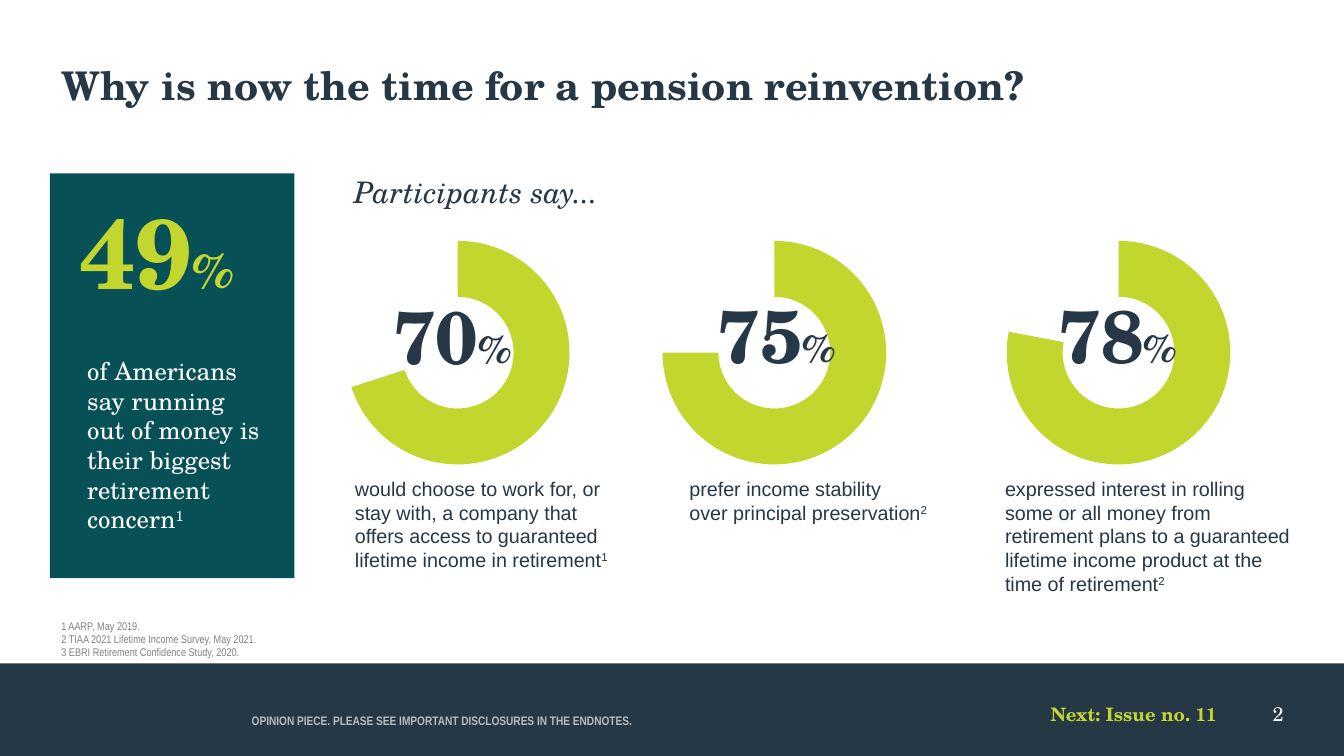
from dataclasses import dataclass
from typing import NamedTuple

from pptx import Presentation
from pptx import util as u
from pptx.chart.data import CategoryChartData
from pptx.dml.color import RGBColor
from pptx.enum import chart as charts, shapes, text

WIDTH, HEIGHT = u.Inches(15.11), u.Inches(8.5)
SERIF, SANS, NARROW = "TeX Gyre Schola", "Arial", "Arial Narrow"
NAVY, TEAL, LIME, WHITE = "263746", "075156", "C3D62E", "FFFFFF"
GREY, SILVER, BLACK = "808080", "BABCBC", "000000"
LEFT, RIGHT = text.PP_ALIGN.LEFT, text.PP_ALIGN.RIGHT
TOP, BOTTOM = text.MSO_ANCHOR.TOP, text.MSO_ANCHOR.BOTTOM


class Box(NamedTuple):
    """A frame in percent of the slide's width and height."""
    left: float
    top: float
    width: float
    height: float

    def lengths(self) -> tuple[int, ...]:
        sides = (WIDTH, HEIGHT, WIDTH, HEIGHT)
        return tuple(round(share * side / 100) for share, side in zip(self, sides))


class Style(NamedTuple):
    font: str
    size: float
    color: str
    bold: bool = False
    italic: bool = False


class Piece(NamedTuple):
    """A run of text, with its own size or raised as a note mark."""
    words: str
    size: float | None = None
    raised: bool = False


@dataclass
class Label:
    box: Box
    style: Style
    paragraphs: list[list[Piece]]
    align: text.PP_ALIGN = LEFT
    anchor: text.MSO_ANCHOR = TOP


@dataclass
class Survey:
    percent: int
    chart_left: float
    number_left: float
    number_top: float
    caption_left: float
    caption_width: float
    caption: str
    note: str


CAPTION = Style(SANS, 16, NAVY)
NUMBER = Style(SERIF, 60, NAVY, bold=True)

BANDS = [(Box(0, 87.76, 100, 12.24), NAVY), (Box(3.71, 22.94, 18.2, 53.53), TEAL)]

LABELS = [
    Label(Box(92.85, 92.82, 2.65, 3.88), Style(SERIF, 16, WHITE), [[Piece("2")]], RIGHT),
    Label(Box(18.73, 91.29, 29.78, 4.94), Style(NARROW, 10, SILVER, bold=True),
          [[Piece("OPINION PIECE. PLEASE SEE IMPORTANT DISCLOSURES IN THE ENDNOTES.")]],
          anchor=BOTTOM),
    Label(Box(49.64, 92.94, 40.9, 4.94), Style(SERIF, 15, LIME, bold=True),
          [[Piece("Next: Issue no. 11")]], RIGHT),
    Label(Box(4.57, 8.12, 90.93, 13.29), Style(SERIF, 32, NAVY, bold=True),
          [[Piece("Why is now the time for a pension reinvention?")]]),
    Label(Box(4.57, 82.35, 90.93, 4.82), Style(NARROW, 9, GREY),
          [[Piece("1 AARP, May 2019.")],
           [Piece("2 TIAA 2021 Lifetime Income Survey, May 2021.")],
           [Piece("3 EBRI Retirement Confidence Study, 2020.")]], anchor=BOTTOM),
    Label(Box(5.89, 25.18, 18.2, 23.53), Style(SERIF, 80, LIME, bold=True),
          [[Piece("49"), Piece("%", 40)]]),
    Label(Box(6.49, 47.06, 12.84, 30.71), Style(SERIF, 20, WHITE),
          [[Piece("of Americans say running out of money is their biggest retirement concern"),
            Piece("1", raised=True)]]),
    Label(Box(26.34, 22.94, 28.66, 7.88), Style(SERIF, 24, NAVY, italic=True),
          [[Piece("Participants say...")]]),
]

SURVEYS = [
    Survey(70, 20.19, 29.25, 38.35, 26.41, 20.25,
           "would choose to work for, or stay with, a company that offers access to "
           "guaranteed lifetime income in retirement", "1"),
    Survey(75, 43.75, 53.41, 38.24, 51.29, 18.6,
           "prefer income stability\nover principal preservation", "2"),
    Survey(78, 69.36, 78.76, 38.24, 74.78, 21.57,
           "expressed interest in rolling some or all money from retirement plans to a "
           "guaranteed lifetime income product at the time of retirement", "2"),
]


def rgb(color: str) -> RGBColor:
    return RGBColor.from_string(color)


def add_band(slide, box: Box, color: str) -> None:
    shape = slide.shapes.add_shape(shapes.MSO_SHAPE.RECTANGLE, *box.lengths())
    shape.shadow.inherit = False
    shape.fill.solid()
    shape.fill.fore_color.rgb = rgb(color)
    shape.line.fill.background()


def add_piece(paragraph, piece: Piece, style: Style) -> None:
    for index, line in enumerate(piece.words.split("\n")):
        if index:
            paragraph.add_line_break()
        run = paragraph.add_run()
        run.text = line
        run.font.name = style.font
        run.font.size = u.Pt(piece.size or style.size)
        run.font.bold, run.font.italic = style.bold, style.italic
        run.font.color.rgb = rgb(style.color)
        if piece.raised:
            run._r.get_or_add_rPr().set("baseline", "30000")


def add_label(slide, label: Label) -> None:
    frame = slide.shapes.add_textbox(*label.box.lengths()).text_frame
    frame.word_wrap = True
    frame.vertical_anchor = label.anchor
    frame.margin_left = frame.margin_top = frame.margin_right = frame.margin_bottom = 0
    for index, pieces in enumerate(label.paragraphs):
        paragraph = frame.add_paragraph() if index else frame.paragraphs[0]
        paragraph.alignment = label.align
        for piece in pieces:
            add_piece(paragraph, piece, label.style)


def add_ring(slide, box: Box, percent: int) -> None:
    """Add a doughnut whose remainder is left unfilled."""
    data = CategoryChartData()
    data.categories = ["1", "2"]
    data.add_series("Series 1", [percent, 100 - percent])
    chart = slide.shapes.add_chart(
        charts.XL_CHART_TYPE.DOUGHNUT, *box.lengths(), data).chart
    chart.has_legend = chart.has_title = False
    chart.font.name, chart.font.size = SERIF, u.Pt(10)
    chart.font.color.rgb = rgb(BLACK)
    plot = chart.plots[0]
    plot.vary_by_categories = True
    share, rest = (plot.series[0].points[index].format for index in range(2))
    share.fill.solid()
    share.fill.fore_color.rgb = rgb(LIME)
    rest.fill.background()
    for part in (share, rest):
        part.line.fill.background()
    for hole in chart._chartSpace.xpath(".//c:holeSize"):
        hole.set("val", "65")


def add_survey(slide, survey: Survey) -> None:
    add_ring(slide, Box(survey.chart_left, 30.24, 27.73, 32.82), survey.percent)
    add_label(slide, Label(Box(survey.number_left, survey.number_top, 10.52, 21.88),
                           NUMBER, [[Piece(str(survey.percent)), Piece("%", 32)]]))
    add_label(slide, Label(Box(survey.caption_left, 63.06, survey.caption_width, 21.88),
                           CAPTION, [[Piece(survey.caption),
                                      Piece(survey.note, raised=True)]]))


def main() -> None:
    presentation = Presentation()
    presentation.slide_width, presentation.slide_height = WIDTH, HEIGHT
    slide = presentation.slides.add_slide(presentation.slide_layouts[6])
    for box, color in BANDS:
        add_band(slide, box, color)
    for label in LABELS:
        add_label(slide, label)
    for survey in SURVEYS:
        add_survey(slide, survey)
    presentation.save("out.pptx")


if __name__ == "__main__":
    main()
